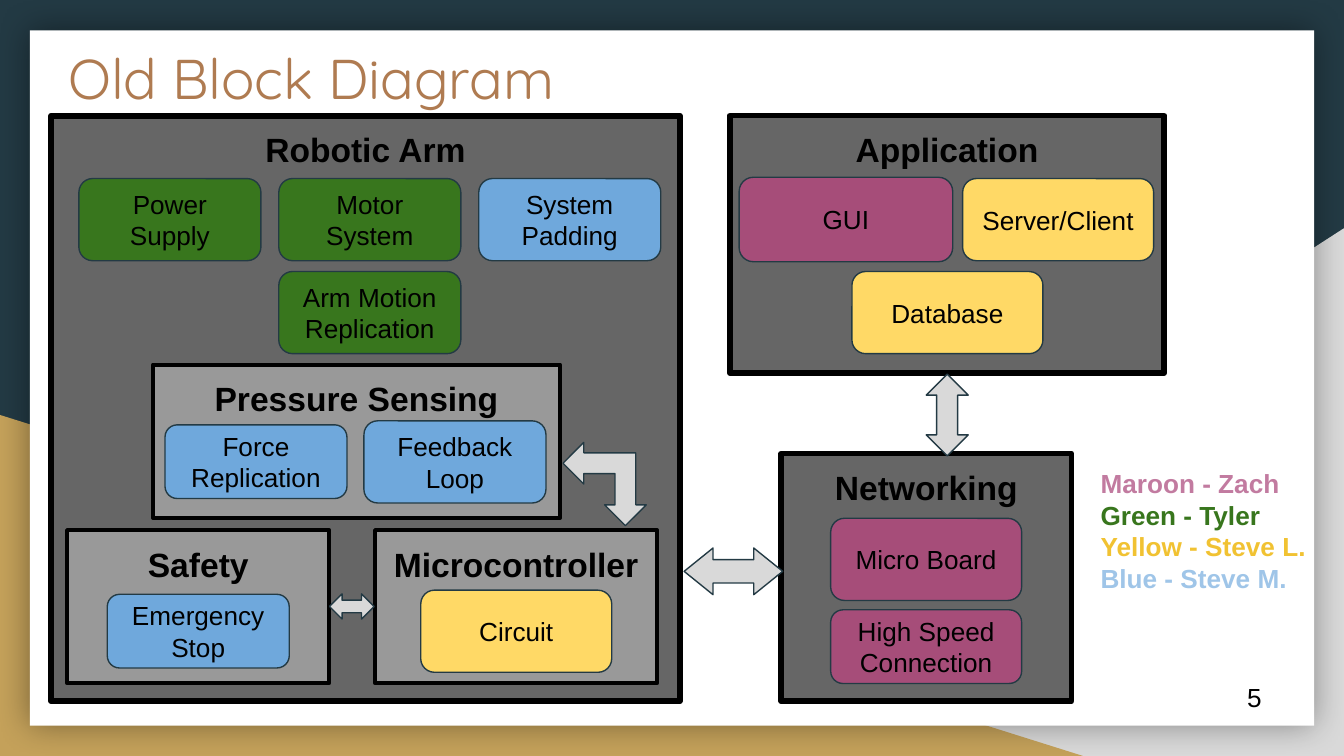
from dataclasses import dataclass

from lxml import etree
from pptx import Presentation
from pptx.dml.color import RGBColor
from pptx.enum import shapes, text
from pptx.oxml import ns
from pptx.util import Pt

COLOURS = {
    "navy": "233A44", "silver": "D9D9D9", "gold": "C4A15A", "white": "FFFFFF",
    "black": "000000", "copper": "AF7B51", "panel": "666666", "subpanel": "999999",
    "green": "38761D", "blue": "6FA8DC", "maroon": "A64D79", "yellow": "FFD966",
    "pink": "C27BA0", "amber": "F1C232", "sky": "9FC5E8",
}
KINDS = shapes.MSO_SHAPE
ALIGN = text.PP_ALIGN
ANCHOR = text.MSO_ANCHOR

ARM_WIDTH, WIDE = 97.5, 102.3
TALL, SHORT = 44, 39.5
ROWS = [95.7, 145.5]
ARM_COLUMNS = [42.3 + 107.1 * i for i in range(3)]
SUB_TOP, SUB_HEIGHT = 284, 82


@dataclass(frozen=True)
class Panel:
    title: str
    left: float
    top: float
    width: float
    height: float
    fill: str = "panel"
    border: float = 3


@dataclass(frozen=True)
class Block:
    label: str
    fill: str
    left: float
    top: float
    width: float = ARM_WIDTH
    height: float = TALL


@dataclass(frozen=True)
class Arrow:
    kind: shapes.MSO_SHAPE
    left: float
    top: float
    width: float
    height: float
    adjustments: tuple = ()
    rotation: float = 0


PANELS = [
    Panel("Networking", 418.5, 243, 155.5, 132.7),
    Panel("Robotic Arm", 27.3, 62, 337, 313.7),
    Panel("Application", 391, 62, 232.7, 138),
    Panel("Pressure Sensing", 82, 195.4, 218, SUB_HEIGHT, "subpanel", 2.25),
    Panel("Safety", 36, SUB_TOP, 140.4, SUB_HEIGHT, "subpanel", 2.25),
    Panel("Microcontroller", 201, SUB_TOP, 151, SUB_HEIGHT, "subpanel", 2.25),
]

BLOCKS = [
    Block("Power Supply", "green", ARM_COLUMNS[0], ROWS[0]),
    Block("Motor System", "green", ARM_COLUMNS[1], ROWS[0]),
    Block("System Padding", "blue", ARM_COLUMNS[2], ROWS[0]),
    Block("Arm Motion Replication", "green", ARM_COLUMNS[1], ROWS[1]),
    Block("Force Replication", "blue", 88.4, 227.6, height=SHORT),
    Block("Feedback Loop", "blue", 195, 225.5),
    Block("Emergency Stop", "blue", 57.5, 318.4, height=SHORT),
    Block("Circuit", "yellow", 225.4, 316.2, WIDE),
    Block("GUI", "maroon", 396, 95, 114.4, 45.2),
    Block("Server/Client", "yellow", 515.7, ROWS[0], WIDE),
    Block("Database", "yellow", 456.4, ROWS[1], WIDE),
    Block("Micro Board", "maroon", 445, 277.7, WIDE),
    Block("High Speed Connection", "maroon", 445, 326.7, WIDE, SHORT),
]

ARROWS = [
    Arrow(KINDS.LEFT_RIGHT_ARROW, 366.5, 293.6, 52.8, 25, (0.5, 0.62)),
    Arrow(KINDS.UP_DOWN_ARROW, 496.2, 200.4, 22.5, 43.8, (0.5, 0.5)),
    Arrow(KINDS.LEFT_UP_ARROW, 301.6, 237, 44.6, 44.6, rotation=270),
    Arrow(KINDS.LEFT_RIGHT_ARROW, 176.5, 318.2, 23.9, 13.5, (0.5, 0.5)),
]

LEGEND = [
    ("Maroon - Zach", "pink"),
    ("Green - Tyler", "green"),
    ("Yellow - Steve L.", "amber"),
    ("Blue - Steve M.", "sky"),
]


def rgb(colour: str) -> RGBColor:
    return RGBColor.from_string(COLOURS[colour])


def style(frame, size: float, colours: list[str], bold=False, font="Arial",
          align=ALIGN.LEFT, anchor=ANCHOR.TOP) -> None:
    frame.word_wrap = True
    frame.vertical_anchor = anchor
    frame.margin_left = frame.margin_right = Pt(7.2)
    frame.margin_top = frame.margin_bottom = Pt(7.2)
    for paragraph, colour in zip(frame.paragraphs, colours):
        paragraph.alignment = align
        for run in paragraph.runs:
            run.font.size = Pt(size)
            run.font.name = font
            run.font.bold = bold
            run.font.color.rgb = rgb(colour)


def add_figure(slide, kind, box: tuple, fill: str, line="", weight=0.75):
    figure = slide.shapes.add_shape(kind, *map(Pt, box))
    figure.shadow.inherit = False
    figure.fill.solid()
    figure.fill.fore_color.rgb = rgb(fill)
    if line:
        figure.line.color.rgb = rgb(line)
        figure.line.width = Pt(weight)
    else:
        figure.line.fill.background()
    return figure


def add_text(slide, box: tuple, lines: list[str], size: float,
             colours: list[str], **options) -> None:
    frame = slide.shapes.add_textbox(*map(Pt, box)).text_frame
    frame.text = "\n".join(lines)
    style(frame, size, colours, **options)


def add_backdrop(slide) -> None:
    slide.background.fill.solid()
    slide.background.fill.fore_color.rgb = rgb("navy")
    right_wedge = add_figure(slide, KINDS.RIGHT_TRIANGLE, (282.4, 122.3, 437.6, 282.7), "silver")
    right_wedge._element.spPr.find(ns.qn("a:xfrm")).set("flipH", "1")
    add_figure(slide, KINDS.RIGHT_TRIANGLE, (0, 222.3, 580.2, 182.7), "gold")
    card = add_figure(slide, KINDS.RECTANGLE, (16, 16.2, 688, 372.5), "white")
    effects = card._element.spPr.find(ns.qn("a:effectLst"))
    glow = etree.SubElement(effects, ns.qn("a:outerShdw"), blurRad=str(Pt(18)),
                            dist="0", dir="0", algn="ctr", rotWithShape="0")
    tint = etree.SubElement(glow, ns.qn("a:srgbClr"), val=COLOURS["black"])
    etree.SubElement(tint, ns.qn("a:alpha"), val="40000")


def add_panel(slide, panel: Panel) -> None:
    box = (panel.left, panel.top, panel.width, panel.height)
    figure = add_figure(slide, KINDS.RECTANGLE, box, panel.fill, "black", panel.border)
    figure.text_frame.text = panel.title
    style(figure.text_frame, 18, ["black"], bold=True, align=ALIGN.CENTER)


def add_block(slide, block: Block) -> None:
    box = (block.left, block.top, block.width, block.height)
    figure = add_figure(slide, KINDS.ROUNDED_RECTANGLE, box, block.fill, "navy")
    figure.text_frame.text = block.label
    style(figure.text_frame, 14, ["black"], align=ALIGN.CENTER, anchor=ANCHOR.MIDDLE)


def add_arrow(slide, arrow: Arrow) -> None:
    box = (arrow.left, arrow.top, arrow.width, arrow.height)
    figure = add_figure(slide, arrow.kind, box, "silver", "navy")
    figure.rotation = arrow.rotation
    for index, value in enumerate(arrow.adjustments):
        figure.adjustments[index] = value


def main() -> None:
    deck = Presentation()
    deck.slide_width, deck.slide_height = Pt(720), Pt(405)
    slide = deck.slides.add_slide(deck.slide_layouts[6])
    add_backdrop(slide)
    add_text(slide, (29.5, 16, 671, 45.4), ["Old Block Diagram"], 30, ["copper"],
             font="Quicksand")
    for panel in PANELS:
        add_panel(slide, panel)
    for block in BLOCKS:
        add_block(slide, block)
    for arrow in ARROWS:
        add_arrow(slide, arrow)
    names, colours = zip(*LEGEND)
    add_text(slide, (582.5, 243.4, 131, 125.3), names, 14, colours, bold=True)
    add_text(slide, (661, 358, 43.2, 31), ["5"], 14, ["black"], anchor=ANCHOR.MIDDLE)
    deck.save("out.pptx")


if __name__ == "__main__":
    main()
